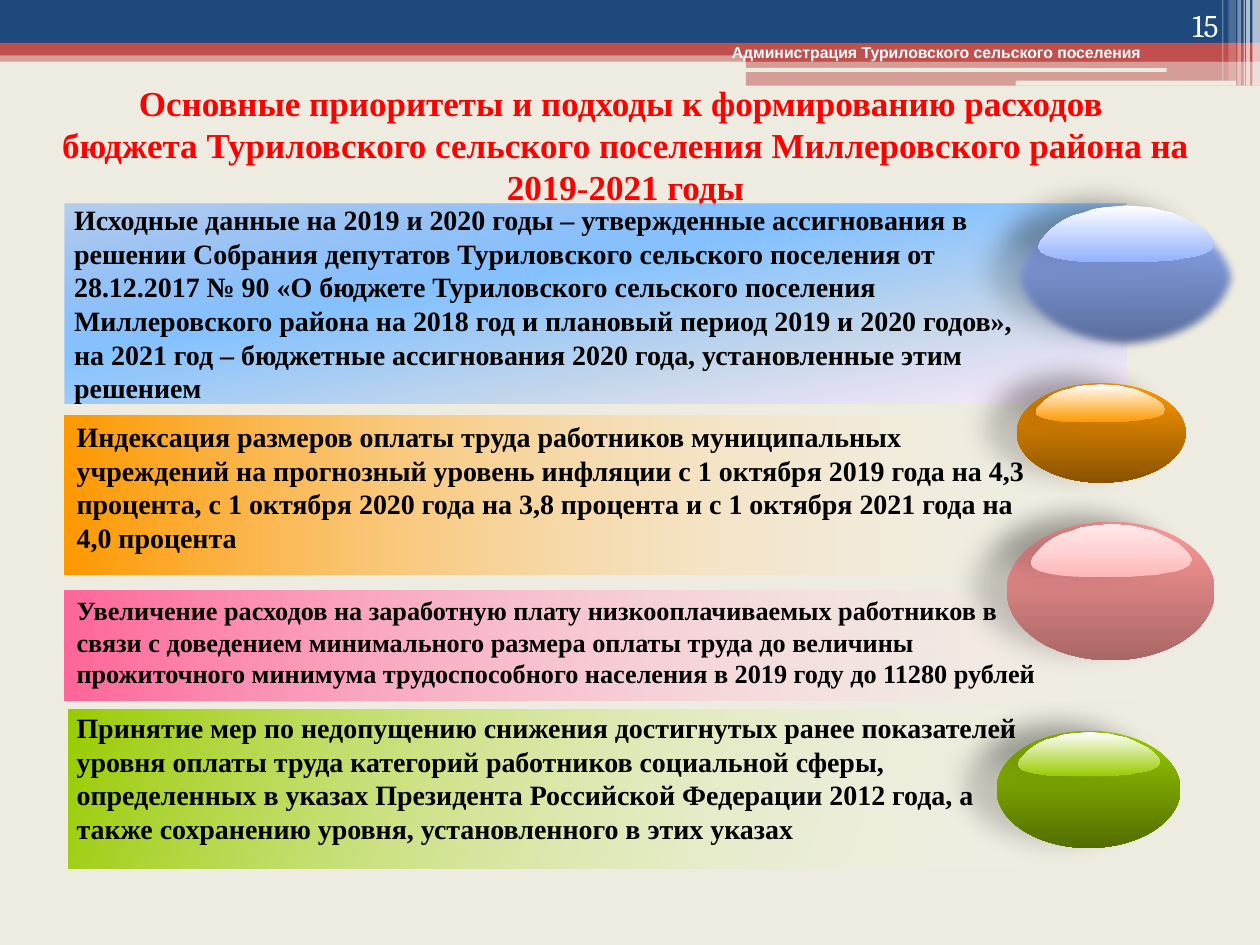
from dataclasses import dataclass

from lxml import etree
from pptx import Presentation
from pptx import util as u
from pptx.dml.color import RGBColor
from pptx.enum import shapes, text
from pptx.oxml.ns import qn

COLORS = {
    "cream": "EEECE1", "navy": "1F497D", "brick": "C0504D", "white": "FFFFFF",
    "black": "000000", "red": "FF0000", "orange": "FF9900", "brown": "8A5300",
    "pink": "FF6699", "rose": "FF9999", "dark_rose": "AA6666", "shell": "FFB7B9",
    "blush": "FFD2D3", "pale_blush": "FFE9E9", "lime": "99CC00", "moss": "536E00",
    "periwinkle": "93B1FD", "slate": "576996", "azure": "5E9EFF", "sky": "85C2FF",
    "mist": "C4D6EB", "lavender": "FFEBFA",
}
SERIF = "Times New Roman"
OUTLINE = [
    (98, 56), (99, 62), (100, 67), (99, 73), (98, 78), (96, 82), (94, 85), (90, 89),
    (86, 91), (82, 93), (78, 96), (68, 98), (60, 100), (36, 100), (26, 99), (18, 97),
    (11, 93), (5, 88), (1.5, 82), (0, 73), (1.5, 62), (4, 53), (7, 43), (11, 33),
    (15, 25), (20, 18), (26, 13), (31, 7), (37, 4), (44, 2), (50, 0), (57, 2),
    (64, 4), (70, 9), (76, 13), (81, 20), (86, 28), (91, 36), (95, 46),
]


@dataclass
class Box:
    left: float
    top: float
    width: float
    height: float

    def lengths(self) -> list:
        return [u.Inches(v) for v in (self.left, self.top, self.width, self.height)]


@dataclass
class Bar:
    box: Box
    color: str
    opacity: int = 100
    rounded: bool = False


@dataclass
class Gradient:
    stops: list
    angle: int


@dataclass
class Label:
    box: Box
    paragraphs: list
    size: float
    color: str = "black"
    font: str = SERIF
    bold: bool = True
    align: text.PP_ALIGN = text.PP_ALIGN.LEFT
    insets: tuple = (0.1, 0.05, 0.1, 0.05)
    bottom: bool = False


@dataclass
class Gem:
    box: Box
    body: Gradient
    shine_box: Box
    shine: Gradient
    soft_edge: float = 0


@dataclass
class Card:
    band: Box
    fill: Gradient
    gem: Gem
    label: Label


def fade(color: str, angle: int) -> Gradient:
    return Gradient([(0, "white", 0), (100, color)], angle)


def down(first: str, last: str) -> Gradient:
    return Gradient([(0, first), (100, last)], 90)


BARS = [
    Bar(Box(0, 0.4, 10, 0.09), "brick", 50),
    Bar(Box(0, 0, 10, 0.34), "navy"),
    Bar(Box(0, 0.34, 10, 0.1), "brick"),
    Bar(Box(5.92, 0.39, 4.08, 0.1), "brick"),
    Bar(Box(5.92, 0.48, 4.08, 0.2), "brick", 50),
    Bar(Box(5.91, 0.54, 3.35, 0.03), "cream", rounded=True),
    Bar(Box(8.06, 0.64, 1.75, 0.04), "cream", rounded=True),
] + [
    Bar(Box(left, 0, width, height), "white", opacity)
    for left, width, height, opacity in [
        (9.94, 0.06, 0.68, 65), (9.89, 0.03, 0.68, 65), (9.87, 0.01, 0.68, 60),
        (9.82, 0.03, 0.68, 40), (9.75, 0.06, 0.64, 20), (9.7, 0.01, 0.64, 30)]
]
HEADINGS = [
    Label(Box(0.28, 0.6, 9.37, 1.11), [
        "Основные приоритеты и подходы к формированию расходов ",
        "бюджета Туриловского сельского поселения Миллеровского района на 2019-2021 годы",
    ], 20, "red", align=text.PP_ALIGN.CENTER),
    Label(Box(5.71, 0.29, 3.94, 0.25),
          ["Администрация Туриловского сельского поселения"], 9, "white", "Arial"),
    Label(Box(8.94, 0, 0.83, 0.4), ["15"], 18, "white", "Cambria", False,
          text.PP_ALIGN.RIGHT, bottom=True),
]
CARDS = [
    Card(Box(0.51, 1.62, 8.43, 1.58),
         Gradient([(0, "azure", 38), (40, "sky"), (70, "mist"), (100, "lavender")], 80),
         Gem(Box(8.03, 1.61, 1.81, 1.18), down("periwinkle", "slate"),
             Box(8.24, 1.63, 1.4, 0.45), down("white", "periwinkle"), 5),
         Label(Box(0.49, 1.57, 7.64, 1.7), [
             "Исходные данные на 2019 и 2020 годы – утвержденные ассигнования в решении "
             "Собрания депутатов Туриловского сельского поселения от 28.12.2017 № 90 "
             "«О бюджете Туриловского сельского поселения Миллеровского района на 2018 год "
             "и плановый период 2019 и 2020 годов», на 2021 год – бюджетные ассигнования "
             "2020 года, установленные этим решением"], 16, insets=(0.1, 0.04, 0, 0.04))),
    Card(Box(0.51, 3.3, 8.43, 1.26), fade("orange", 180),
         Gem(Box(8.07, 3.04, 1.34, 0.79), down("orange", "brown"),
             Box(8.22, 3.05, 1.03, 0.3), down("white", "orange")),
         Label(Box(0.51, 3.25, 7.72, 1.47), [
             "Индексация размеров оплаты труда работников муниципальных учреждений на "
             "прогнозный уровень инфляции с 1 октября 2019 года на 4,3 процента, с 1 октября "
             "2020 года на 3,8 процента и с 1 октября 2021 года на 4,0 процента"],
             16, insets=(0.1, 0.08, 0.1, 0.04))),
    Card(Box(0.51, 4.69, 9.09, 0.87), fade("pink", 180),
         Gem(Box(7.99, 4.14, 1.65, 1.1), down("rose", "dark_rose"),
             Box(8.18, 4.16, 1.28, 0.42),
             Gradient([(0, "shell"), (50, "blush"), (100, "pale_blush")], 270)),
         Label(Box(0.51, 4.68, 7.87, 0.85), [
             "Увеличение расходов на заработную плату низкооплачиваемых работников в связи с "
             "доведением минимального размера оплаты труда до величины прожиточного минимума "
             "трудоспособного населения в 2019 году до 11280 рублей"],
             15, insets=(0.1, 0.04, 0.1, 0.05))),
    Card(Box(0.54, 5.63, 8.19, 1.26), fade("lime", 200),
         Gem(Box(7.91, 5.8, 1.46, 0.93), down("lime", "moss"),
             Box(8.08, 5.81, 1.13, 0.35), down("white", "lime")),
         Label(Box(0.51, 5.59, 7.8, 1.18), [
             "Принятие мер по недопущению снижения достигнутых ранее показателей уровня "
             "оплаты труда категорий работников социальной сферы, определенных в указах "
             "Президента Российской Федерации 2012 года, а также сохранению уровня, "
             "установленного в этих указах"], 16)),
]


def add_color(parent, color: str, opacity: int = 100) -> None:
    node = etree.SubElement(parent, qn("a:srgbClr"), val=COLORS[color])
    if opacity < 100:
        etree.SubElement(node, qn("a:alpha"), val=str(opacity * 1000))


def strip(shape) -> None:
    shape.shadow.inherit = False
    shape.line.fill.background()
    shape.fill.background()


def paint(shape, gradient: Gradient) -> None:
    strip(shape)
    properties = shape._element.spPr
    fill = etree.Element(qn("a:gradFill"), rotWithShape="1")
    stops = etree.SubElement(fill, qn("a:gsLst"))
    for position, *color in gradient.stops:
        add_color(etree.SubElement(stops, qn("a:gs"), pos=str(position * 1000)), *color)
    etree.SubElement(fill, qn("a:lin"), ang=str(gradient.angle * 60000), scaled="0")
    properties.replace(properties.find(qn("a:noFill")), fill)


def cast_shadow(shape, soft_edge: float = 0) -> None:
    effects = shape._element.spPr.find(qn("a:effectLst"))
    shadow = etree.SubElement(
        effects, qn("a:outerShdw"), blurRad=str(u.Pt(14.5)), dist=str(u.Pt(19)),
        dir=str(192 * 60000), algn="ctr", rotWithShape="0")
    add_color(shadow, "black", 18)
    if soft_edge:
        etree.SubElement(effects, qn("a:softEdge"), rad=str(u.Pt(soft_edge)))


def add_bar(slide, bar: Bar) -> None:
    kind = shapes.MSO_SHAPE.ROUNDED_RECTANGLE if bar.rounded else shapes.MSO_SHAPE.RECTANGLE
    shape = slide.shapes.add_shape(kind, *bar.box.lengths())
    strip(shape)
    properties = shape._element.spPr
    fill = etree.Element(qn("a:solidFill"))
    add_color(fill, bar.color, bar.opacity)
    properties.replace(properties.find(qn("a:noFill")), fill)


def add_label(slide, label: Label) -> None:
    frame = slide.shapes.add_textbox(*label.box.lengths()).text_frame
    frame.word_wrap = True
    (frame.margin_left, frame.margin_top,
     frame.margin_right, frame.margin_bottom) = map(u.Inches, label.insets)
    if label.bottom:
        frame.vertical_anchor = text.MSO_ANCHOR.BOTTOM
    else:
        frame.auto_size = text.MSO_AUTO_SIZE.SHAPE_TO_FIT_TEXT
    for index, words in enumerate(label.paragraphs):
        paragraph = frame.add_paragraph() if index else frame.paragraphs[0]
        paragraph.alignment = label.align
        run = paragraph.add_run()
        run.text = words
        run.font.name, run.font.size, run.font.bold = label.font, u.Pt(label.size), label.bold
        run.font.color.rgb = RGBColor.from_string(COLORS[label.color])


def add_gem(slide, gem: Gem) -> None:
    body = slide.shapes.add_shape(shapes.MSO_SHAPE.OVAL, *gem.box.lengths())
    paint(body, gem.body)
    cast_shadow(body, gem.soft_edge)
    box = gem.shine_box
    points = [(u.Inches(box.left + box.width * x / 100), u.Inches(box.top + box.height * y / 100))
              for x, y in OUTLINE]
    builder = slide.shapes.build_freeform(*points[0])
    builder.add_line_segments(points[1:], close=True)
    shine = builder.convert_to_shape()
    paint(shine, gem.shine)
    cast_shadow(shine)


def add_card(slide, card: Card) -> None:
    band = slide.shapes.add_shape(shapes.MSO_SHAPE.RECTANGLE, *card.band.lengths())
    paint(band, card.fill)
    add_gem(slide, card.gem)
    add_label(slide, card.label)


def main() -> None:
    """Build the slide on budget spending priorities."""
    presentation = Presentation()
    presentation.slide_width, presentation.slide_height = u.Inches(10), u.Inches(7.5)
    slide = presentation.slides.add_slide(presentation.slide_layouts[6])
    slide.background.fill.solid()
    slide.background.fill.fore_color.rgb = RGBColor.from_string(COLORS["cream"])
    for bar in BARS:
        add_bar(slide, bar)
    for heading in HEADINGS:
        add_label(slide, heading)
    for card in CARDS:
        add_card(slide, card)
    presentation.save("out.pptx")


if __name__ == "__main__":
    main()
